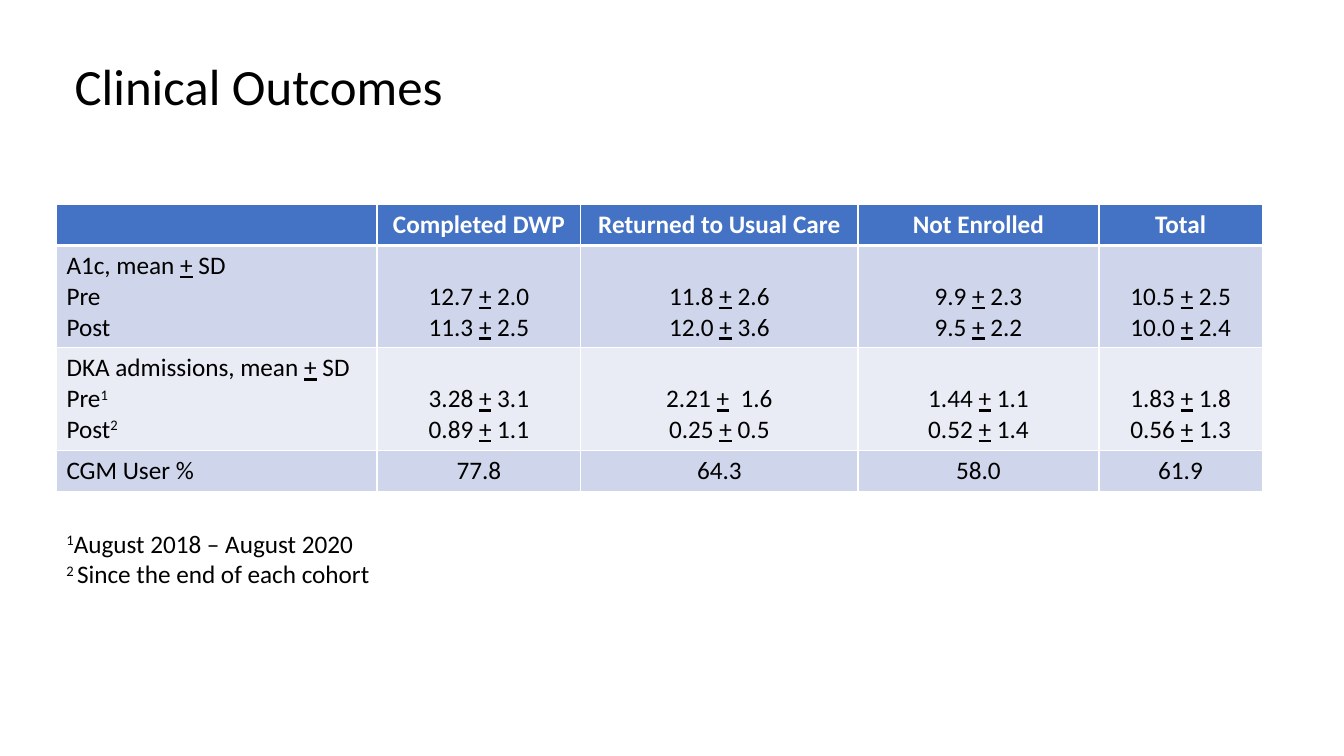
"""Build the Clinical Outcomes slide with its results table and footnotes."""
from typing import NamedTuple

from lxml import etree
from pptx import Presentation
from pptx.dml.color import RGBColor
from pptx.enum import text as t
from pptx.oxml import ns
from pptx.util import Inches, Pt

BLACK, WHITE, HEADER_BLUE = "000000", "FFFFFF", "4472C4"
BANDS = ("CFD5EA", "E9EBF5")
COLUMN_WIDTHS = (3.18, 2.02, 2.75, 2.39, 1.62)
LINE_HEIGHT, CELL_PADDING = 0.305, 0.1
GROUPS = ("Completed DWP", "Returned to Usual Care", "Not Enrolled", "Total")


class Outcome(NamedTuple):
    label: tuple[str, ...]
    results: tuple[tuple[str, ...], ...]


OUTCOMES = (
    Outcome(
        ("A1c, mean |_+| SD", "Pre", "Post"),
        (
            ("12.7 |_+| 2.0", "11.3 |_+| 2.5"),
            ("11.8 |_+| 2.6", "12.0 |_+| 3.6"),
            ("9.9 |_+| 2.3", "9.5 |_+| 2.2"),
            ("10.5 |_+| 2.5", "10.0 |_+| 2.4"),
        ),
    ),
    Outcome(
        ("DKA admissions, mean |_+| SD", "Pre|^1", "Post|^2"),
        (
            ("3.28 |_+| 3.1", "0.89 |_+| 1.1"),
            ("2.21 |_+|  1.6", "0.25 |_+| 0.5"),
            ("1.44 |_+| 1.1", "0.52 |_+| 1.4"),
            ("1.83 |_+| 1.8", "0.56 |_+| 1.3"),
        ),
    ),
    Outcome(("CGM User %",), (("77.8",), ("64.3",), ("58.0",), ("61.9",))),
)
FOOTNOTES = ("^1|August 2018 – August 2020", "^2 |Since the end of each cohort")


def rgb(hex_color: str) -> RGBColor:
    """Turn a hex string into a colour."""
    return RGBColor.from_string(hex_color)


def write(frame, lines, *, size=18, color=BLACK, bold=False,
          align=t.PP_ALIGN.LEFT, spacing=None) -> None:
    """Write lines whose |-separated parts start with _ (underline) or ^ (superscript)."""
    for index, line in enumerate(lines):
        paragraph = frame.add_paragraph() if index else frame.paragraphs[0]
        paragraph.alignment = align
        paragraph.line_spacing = spacing
        for part in line.split("|"):
            run = paragraph.add_run()
            run.text = part.lstrip("_^")
            font = run.font
            font.name, font.size, font.bold = "Calibri", Pt(size), bold
            font.color.rgb = rgb(color)
            if part.startswith("_"):
                font.underline = True
            if part.startswith("^"):
                font._element.set("baseline", "30000")


def outline(cell, *, top: float = 1, bottom: float = 1) -> None:
    """Give a cell white borders, with widths in points."""
    properties = cell._tc.get_or_add_tcPr()
    sides = {"lnL": 1, "lnR": 1, "lnT": top, "lnB": bottom}
    for position, (side, width) in enumerate(sides.items()):
        border = etree.Element(ns.qn(f"a:{side}"), w=str(Pt(width)))
        fill = etree.SubElement(border, ns.qn("a:solidFill"))
        etree.SubElement(fill, ns.qn("a:srgbClr"), val=WHITE)
        properties.insert(position, border)


def add_title(slide) -> None:
    """Place and format the title."""
    title = slide.shapes.title
    title.left, title.top = Inches(0.64), Inches(0.63)
    title.width, title.height = Inches(11.5), Inches(0.58)
    title.text_frame.auto_size = t.MSO_AUTO_SIZE.NONE
    title.text_frame.vertical_anchor = t.MSO_ANCHOR.MIDDLE
    write(title.text_frame, ["Clinical Outcomes"], size=36.3, spacing=0.7)


def add_outcomes(slide) -> None:
    """Draw the outcomes table, with results aligned to the foot of each row."""
    heights = [LINE_HEIGHT * len(lines) + CELL_PADDING
               for lines in (("header",), *(outcome.label for outcome in OUTCOMES))]
    table = slide.shapes.add_table(
        len(heights), len(COLUMN_WIDTHS), Inches(0.56), Inches(2.03),
        Inches(sum(COLUMN_WIDTHS)), Inches(sum(heights))).table
    for column, width in zip(table.columns, COLUMN_WIDTHS):
        column.width = Inches(width)
    for row, height in zip(table.rows, heights):
        row.height = Inches(height)

    for column, group in enumerate(("", *GROUPS)):
        header = table.cell(0, column)
        header.fill.solid()
        header.fill.fore_color.rgb = rgb(HEADER_BLUE)
        outline(header, bottom=3)
        if group:
            write(header.text_frame, [group], color=WHITE, bold=True,
                  align=t.PP_ALIGN.CENTER)

    for row, outcome in enumerate(OUTCOMES, start=1):
        for column, lines in enumerate((outcome.label, *outcome.results)):
            cell = table.cell(row, column)
            cell.fill.solid()
            cell.fill.fore_color.rgb = rgb(BANDS[(row - 1) % len(BANDS)])
            outline(cell, top=3 if row == 1 else 1)
            cell.vertical_anchor = t.MSO_ANCHOR.BOTTOM if column else t.MSO_ANCHOR.TOP
            write(cell.text_frame, lines,
                  align=t.PP_ALIGN.CENTER if column else t.PP_ALIGN.LEFT)


def add_footnotes(slide) -> None:
    """Add the notes on the periods before and after."""
    footnotes = slide.shapes.add_textbox(
        Inches(0.56), Inches(5.19), Inches(3.37), Inches(1.01))
    footnotes.text_frame.word_wrap = True
    write(footnotes.text_frame, FOOTNOTES)


def main() -> None:
    """Build and save the presentation."""
    deck = Presentation()
    deck.slide_width, deck.slide_height = Inches(13.33), Inches(7.5)
    slide = deck.slides.add_slide(deck.slide_layouts.get_by_name("Title Only"))
    add_outcomes(slide)
    add_title(slide)
    add_footnotes(slide)
    deck.save("out.pptx")


if __name__ == "__main__":
    main()
